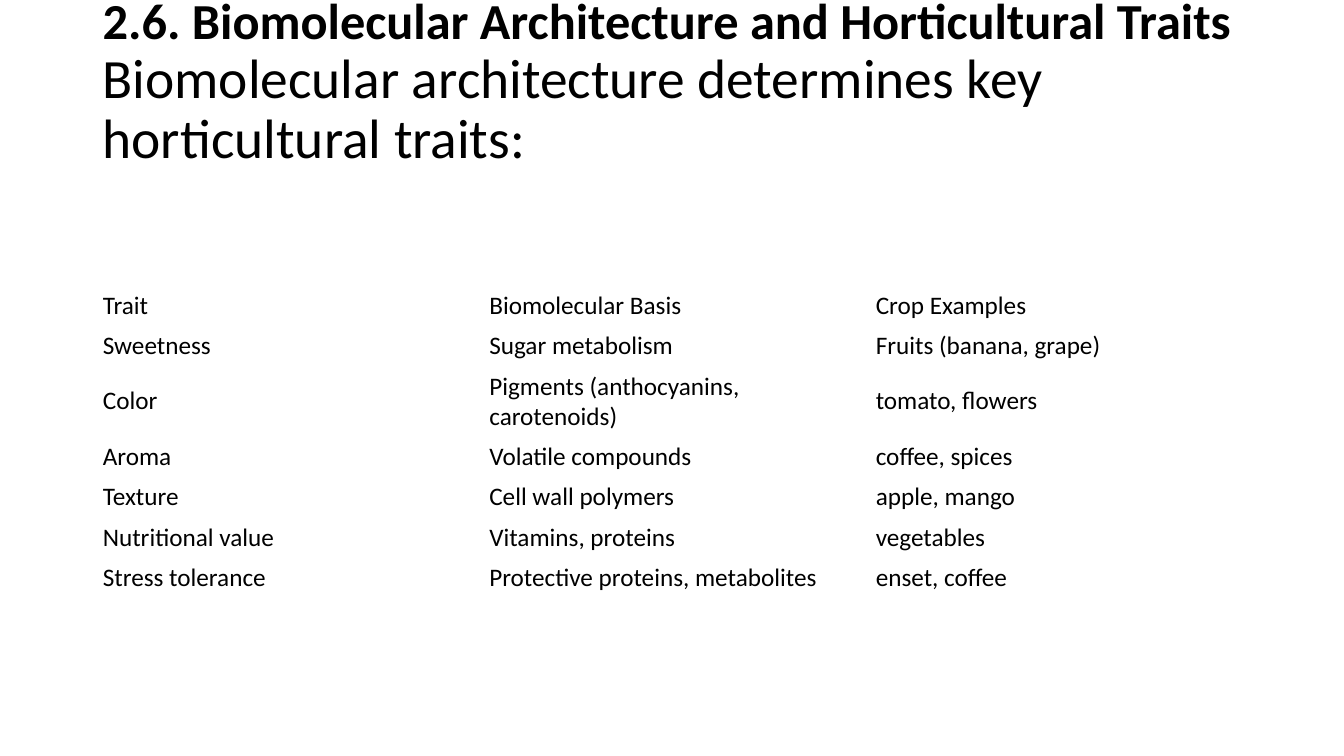
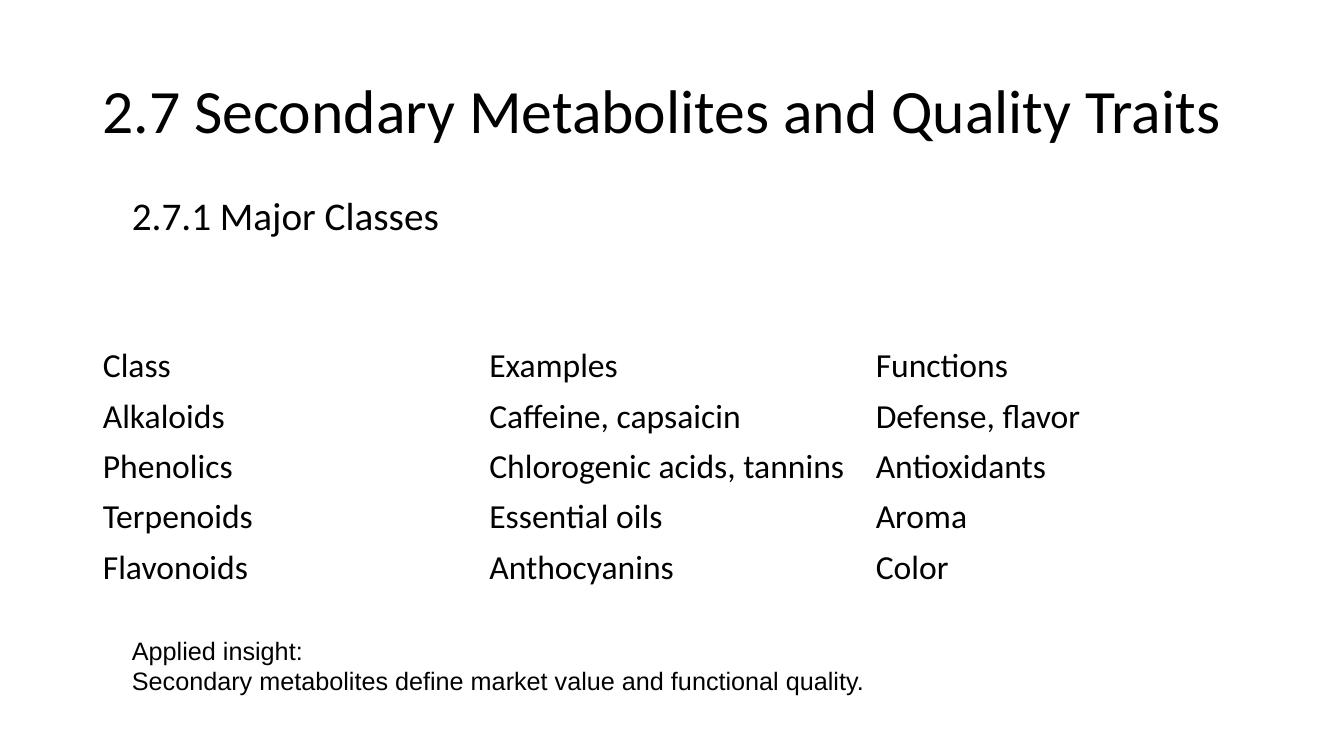
from dataclasses import dataclass

from pptx import Presentation
from pptx.dml.color import RGBColor
from pptx.enum.text import MSO_ANCHOR
from pptx.util import Inches, Pt


@dataclass(frozen=True)
class Theme:
    ink: RGBColor = RGBColor(0x00, 0x00, 0x00)
    heading_font: str = "Calibri"
    note_font: str = "Arial"
    title: float = 44
    long_title: float = 36
    lead: float = 39.6
    subtitle: float = 28
    note: float = 18
    small_table: float = 18
    large_table: float = 24
    title_spacing: float = 0.9


THEME = Theme()
MARGIN = 0.92
CONTENT_WIDTH = 11.5
TITLE_BOX = (MARGIN, 0.4, CONTENT_WIDTH, 1.45)

TRAITS_TITLE = [
    ("2.6. Biomolecular Architecture and Horticultural Traits", THEME.long_title, True),
    ("Biomolecular architecture determines key horticultural traits:", THEME.lead, False),
]
TRAITS = [
    ("Trait", "Biomolecular Basis", "Crop Examples"),
    ("Sweetness", "Sugar metabolism", "Fruits (banana, grape)"),
    ("Color", "Pigments (anthocyanins, carotenoids)", "tomato, flowers"),
    ("Aroma", "Volatile compounds", "coffee, spices"),
    ("Texture", "Cell wall polymers", "apple, mango"),
    ("Nutritional value", "Vitamins, proteins", "vegetables"),
    ("Stress tolerance", "Protective proteins, metabolites", "enset, coffee"),
]

METABOLITES_TITLE = [("2.7 Secondary Metabolites and Quality Traits", THEME.title, False)]
METABOLITES_SUBTITLE = [("2.7.1 Major Classes", THEME.subtitle, False)]
METABOLITES = [
    ("Class", "Examples", "Functions"),
    ("Alkaloids", "Caffeine, capsaicin", "Defense, flavor"),
    ("Phenolics", "Chlorogenic acids, tannins", "Antioxidants"),
    ("Terpenoids", "Essential oils", "Aroma"),
    ("Flavonoids", "Anthocyanins", "Color"),
]
INSIGHT = [
    ("Applied insight:", THEME.note, False),
    ("Secondary metabolites define market value and functional quality.", THEME.note, False),
]


def style(paragraph, size, bold=False, font_name=THEME.heading_font):
    for run in paragraph.runs:
        run.font.name = font_name
        run.font.size = Pt(size)
        run.font.bold = bold
        run.font.color.rgb = THEME.ink


def add_text(slide, box, lines, font_name=THEME.heading_font,
             anchor=MSO_ANCHOR.MIDDLE, spacing=None):
    """Write (text, size, bold) lines, one paragraph each."""
    frame = slide.shapes.add_textbox(*map(Inches, box)).text_frame
    frame.word_wrap = True
    frame.vertical_anchor = anchor
    frame.text = "\n".join(text for text, _, _ in lines)
    for paragraph, (_, size, bold) in zip(frame.paragraphs, lines):
        paragraph.line_spacing = spacing
        style(paragraph, size, bold, font_name)
    return frame


def add_title(slide, lines):
    return add_text(slide, TITLE_BOX, lines, spacing=THEME.title_spacing)


def add_plain_table(slide, top, rows, size, row_height):
    """Add an unfilled table whose rows grow to fit wrapped text."""
    column_count = len(rows[0])
    table = slide.shapes.add_table(
        len(rows), column_count, Inches(MARGIN), Inches(top),
        Inches(CONTENT_WIDTH), Inches(row_height * len(rows))).table
    table.first_row = table.horz_banding = False
    for row, texts in zip(table.rows, rows):
        for cell, text in zip(row.cells, texts):
            cell.fill.background()
            cell.vertical_anchor = MSO_ANCHOR.MIDDLE
            cell.text_frame.text = text
            style(cell.text_frame.paragraphs[0], size)


def build_traits(slide):
    title = add_title(slide, TRAITS_TITLE)
    title.margin_bottom = Inches(0.65)  # lifts the long title clear of the table
    add_plain_table(slide, 2.83, TRAITS, THEME.small_table, 0.4)


def build_metabolites(slide):
    add_title(slide, METABOLITES_TITLE)
    add_plain_table(slide, 3.38, METABOLITES, THEME.large_table, 0.5)
    add_text(slide, (1.21, 1.85, 3.6, 0.57), METABOLITES_SUBTITLE, anchor=MSO_ANCHOR.TOP)
    add_text(slide, (1.21, 6.25, 11, 0.7), INSIGHT, THEME.note_font)


def main():
    deck = Presentation()
    deck.slide_width, deck.slide_height = Inches(13.33), Inches(7.5)
    blank = deck.slide_layouts[6]
    for build in (build_traits, build_metabolites):
        build(deck.slides.add_slide(blank))
    deck.save("out.pptx")


if __name__ == "__main__":
    main()
